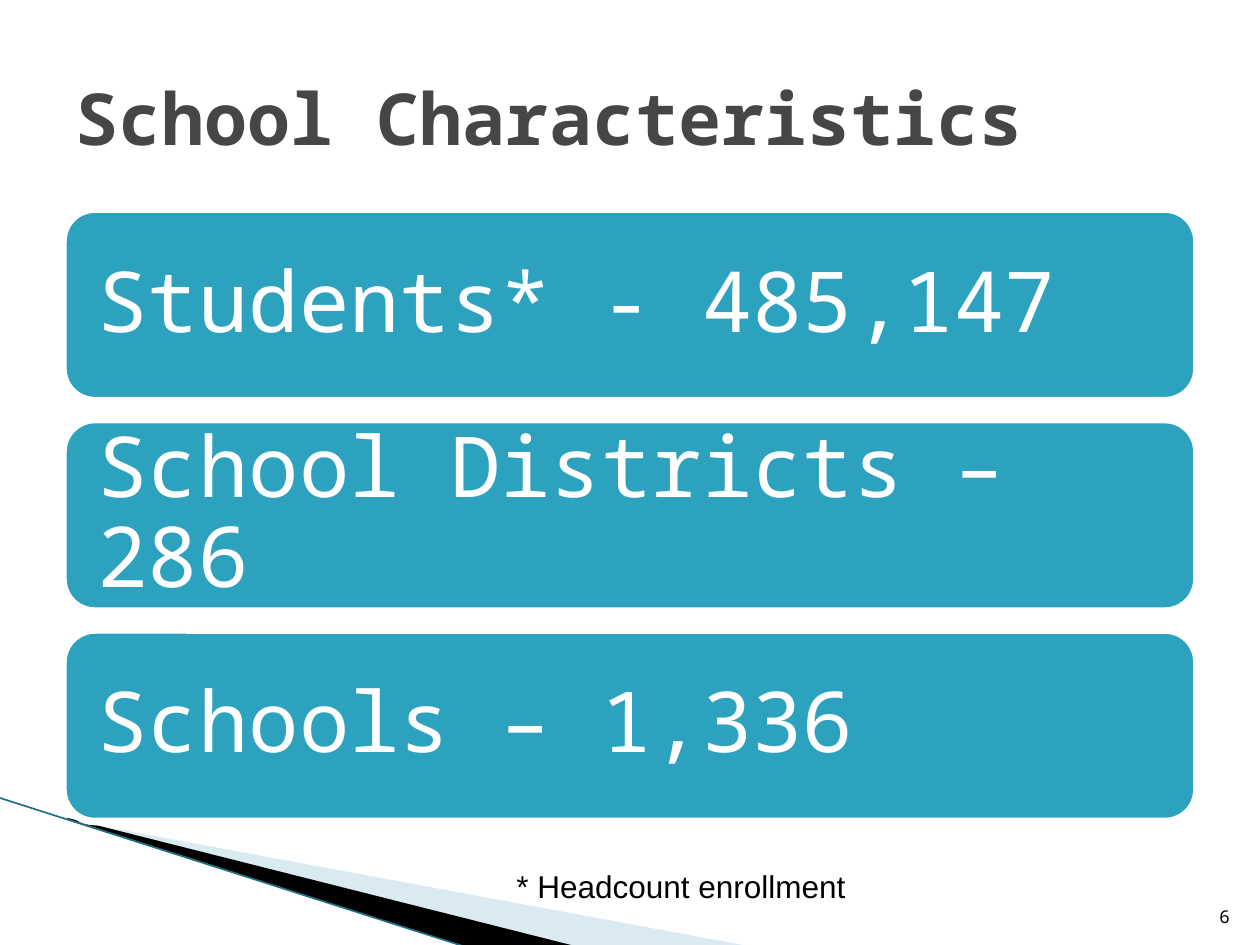
from lxml import etree
from pptx import Presentation
from pptx.dml.color import RGBColor
from pptx.enum.shapes import MSO_CONNECTOR, MSO_SHAPE
from pptx.enum.text import MSO_ANCHOR, MSO_AUTO_SIZE, PP_ALIGN
from pptx.oxml.ns import qn
from pptx.util import Pt

PX = 9144
MONO = "Noto Sans Mono"
ROUNDED = MSO_SHAPE.ROUNDED_RECTANGLE
STRAIGHT = MSO_CONNECTOR.STRAIGHT
MIDDLE, BOTTOM = MSO_ANCHOR.MIDDLE, MSO_ANCHOR.BOTTOM
LEFT, RIGHT = PP_ALIGN.LEFT, PP_ALIGN.RIGHT
GROW = MSO_AUTO_SIZE.SHAPE_TO_FIT_TEXT


def px(*lengths):
    return [n * PX for n in lengths]


def rgb(color):
    return RGBColor.from_string(color)


def write(sp, text, size, color, font=MONO, bold=False, align=LEFT):
    tf = sp.text_frame
    tf.word_wrap = True
    p = tf.paragraphs[0]
    p.text = text
    p.alignment = align
    p.font.name = font
    p.font.size = Pt(size)
    p.font.bold = bold
    p.font.color.rgb = rgb(color)
    return tf


def add_wedge(slide, points, color, alpha=None):
    builder = slide.shapes.build_freeform(*points[0], scale=PX)
    builder.add_line_segments(points[1:], close=True)
    sp = builder.convert_to_shape()
    sp.shadow.inherit = False
    sp.fill.solid()
    sp.fill.fore_color.rgb = rgb(color)
    sp.line.fill.background()
    if alpha is not None:
        clr = sp.fill._xPr.find(qn("a:solidFill"))[0]
        etree.SubElement(clr, qn("a:alpha")).set("val", str(alpha * 1000))


def add_corner(slide, left, top):
    def at(*points):
        return [(left + x, top + y) for x, y in points]

    add_wedge(slide, at((56, 18), (596, 118), (457, 118), (56, 17)), "A0CBDC", 40)
    add_wedge(slide, at((54, 16), (458, 118), (373, 119), (55, 17)), "000000")
    (x1, y1), (x2, y2) = at((0, 0), (372, 119))
    line = slide.shapes.add_connector(STRAIGHT, *px(x1, y1, x2, y2))
    line.line.color.rgb = rgb("1F7085")
    line.line.width = Pt(0.95)
    etree.SubElement(line._element.spPr, qn("a:effectLst"))


def add_title(slide, box, text):
    sp = slide.shapes.title
    sp.left, sp.top, sp.width, sp.height = px(*box)
    tf = write(sp, text, 41, "464646", bold=True)
    tf.vertical_anchor = MIDDLE


def add_facts(slide, box, facts, gap):
    left, top, width, height = box
    bar = (height - gap * (len(facts) - 1)) // len(facts)
    for i, fact in enumerate(facts):
        y = top + i * (bar + gap)
        sp = slide.shapes.add_shape(ROUNDED, *px(left, y, width, bar))
        sp.shadow.inherit = False
        sp.fill.solid()
        sp.fill.fore_color.rgb = rgb("2DA2BF")
        sp.line.color.rgb = rgb("FFFFFF")
        sp.line.width = Pt(4.33)
        tf = write(sp, fact, 48, "FFFFFF")
        tf.vertical_anchor = MIDDLE
        tf.margin_left = tf.margin_right = 20 * PX
        tf.margin_top = tf.margin_bottom = 20 * PX
        tf.paragraphs[0].line_spacing = 0.9


def add_footnote(slide, box, text):
    sp = slide.shapes.add_textbox(*px(*box))
    write(sp, text, 18, "000000", font="Arial").auto_size = GROW


def add_page_number(slide, box, text):
    sp = slide.shapes.add_textbox(*px(*box))
    write(sp, text, 10, "000000", align=RIGHT).vertical_anchor = BOTTOM


def main():
    prs = Presentation()
    prs.slide_width, prs.slide_height = px(1000, 750)
    slide = prs.slides.add_slide(prs.slide_layouts[5])
    add_corner(slide, -1, 633)
    add_title(slide, (50, 30, 900, 125), "School Characteristics")
    facts = ["Students* - 485,147", "School Districts – 286", "Schools – 1,336"]
    add_facts(slide, (50, 166, 900, 486), facts, 15)
    add_page_number(slide, (946, 701, 40, 40), "6")
    add_footnote(slide, (400, 683, 367, 40), "* Headcount enrollment")
    prs.save("out.pptx")


if __name__ == "__main__":
    main()
